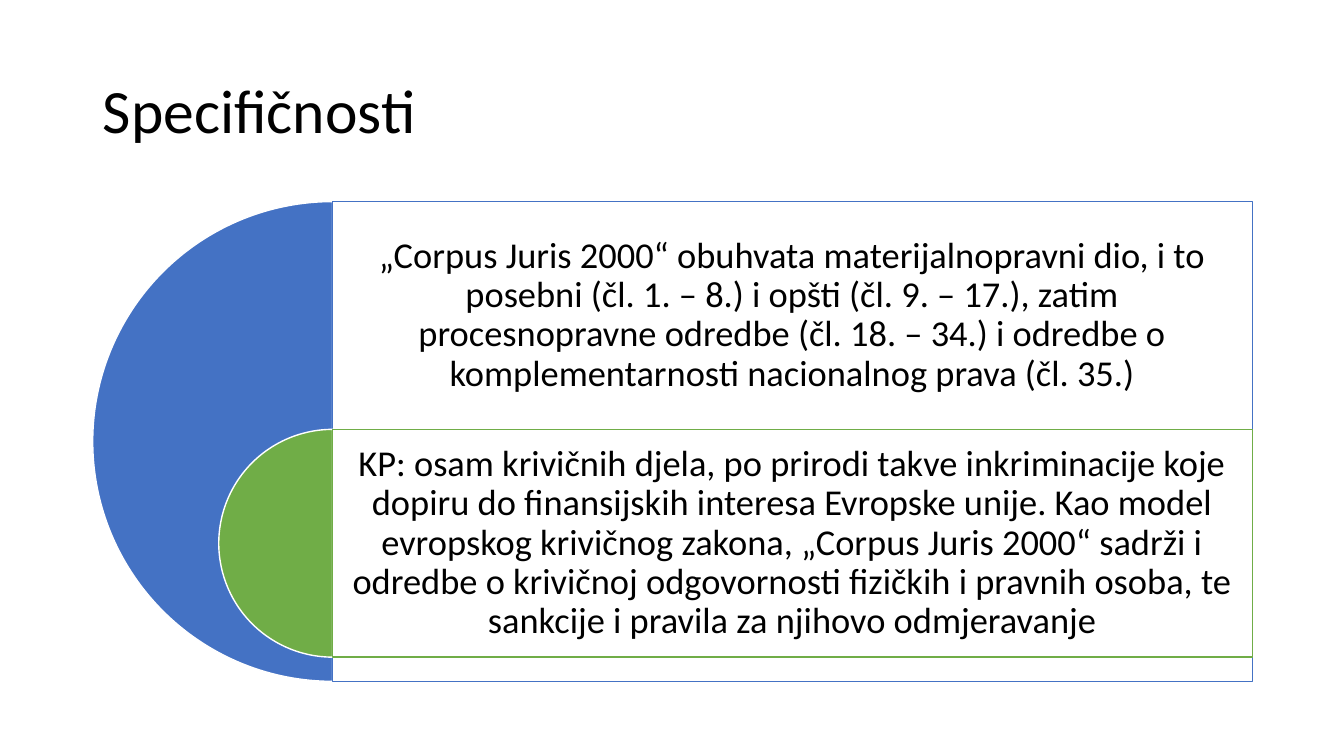
from lxml import etree
from pptx import Presentation
from pptx import util as u
from pptx.dml.color import RGBColor
from pptx.enum import shapes, text
from pptx.oxml.ns import qn

PX = 9144  # EMU per px, 100 px to the inch
COLORS = {"blue": "4472C4", "green": "70AD47", "white": "FFFFFF", "black": "000000"}


def write(box, words, size, align, inset):
    frame = box.text_frame
    frame.word_wrap = True
    frame.auto_size = text.MSO_AUTO_SIZE.NONE
    frame.vertical_anchor = text.MSO_ANCHOR.MIDDLE
    frame.margin_left = frame.margin_right = inset * PX
    frame.margin_top = frame.margin_bottom = inset * PX
    para = frame.paragraphs[0]
    para.alignment = align
    para.line_spacing = 0.9
    span = para.add_run()
    span.text = words
    span.font.size = u.Pt(size)
    span.font.name = "Calibri"
    span.font.color.rgb = RGBColor.from_string(COLORS["black"])


def add_outlined(kind, left, top, width, height, fill, line):
    shape = page.shapes.add_shape(kind, left * PX, top * PX, width * PX, height * PX)
    shape.shadow.inherit = False
    shape.fill.solid()
    shape.fill.fore_color.rgb = RGBColor.from_string(COLORS[fill])
    shape.line.color.rgb = RGBColor.from_string(COLORS[line])
    shape.line.width = u.Pt(1)
    return shape


deck = Presentation()
deck.slide_width, deck.slide_height = 1333 * PX, 750 * PX
page = deck.slides.add_slide(deck.slide_layouts[5])

title = page.shapes.title
title.left, title.top, title.width, title.height = 92 * PX, 40 * PX, 1150 * PX, 145 * PX
write(title, "Specifičnosti", size=44, align=text.PP_ALIGN.LEFT, inset=10)

AXIS, PANEL_WIDTH, ROW_HEIGHT = 330, 912, 226
tiers = [
    (200, 476, "blue",
     "„Corpus Juris 2000“ obuhvata materijalnopravni dio, i to posebni (čl. 1. – 8.) "
     "i opšti (čl. 9. – 17.), zatim procesnopravne odredbe (čl. 18. – 34.) i odredbe "
     "o komplementarnosti nacionalnog prava (čl. 35.)"),
    (200 + ROW_HEIGHT, ROW_HEIGHT, "green",
     "KP: osam krivičnih djela, po prirodi takve inkriminacije koje dopiru do "
     "finansijskih interesa Evropske unije. Kao model evropskog krivičnog zakona, "
     "„Corpus Juris 2000“ sadrži i odredbe o krivičnoj odgovornosti fizičkih i "
     "pravnih osoba, te sankcije i pravila za njihovo odmjeravanje"),
]

for top, diameter, color, words in tiers:
    half_disc = add_outlined(shapes.MSO_SHAPE.PIE, AXIS - diameter // 2, top,
                             diameter, diameter, fill=color, line="white")
    # Angles in 1/60000 degree, divided by 100000: 90 to 270 degrees
    half_disc.adjustments[0], half_disc.adjustments[1] = 54, 162

    panel = add_outlined(shapes.MSO_SHAPE.RECTANGLE, AXIS, top,
                         PANEL_WIDTH, diameter, fill="white", line=color)
    panel_color = panel.fill._xPr.find(qn("a:solidFill"))[0]
    etree.SubElement(panel_color, qn("a:alpha"), val="90000")

    box = page.shapes.add_textbox(AXIS * PX, top * PX, PANEL_WIDTH * PX, ROW_HEIGHT * PX)
    write(box, words, size=26, align=text.PP_ALIGN.CENTER, inset=11)

deck.save("out.pptx")
